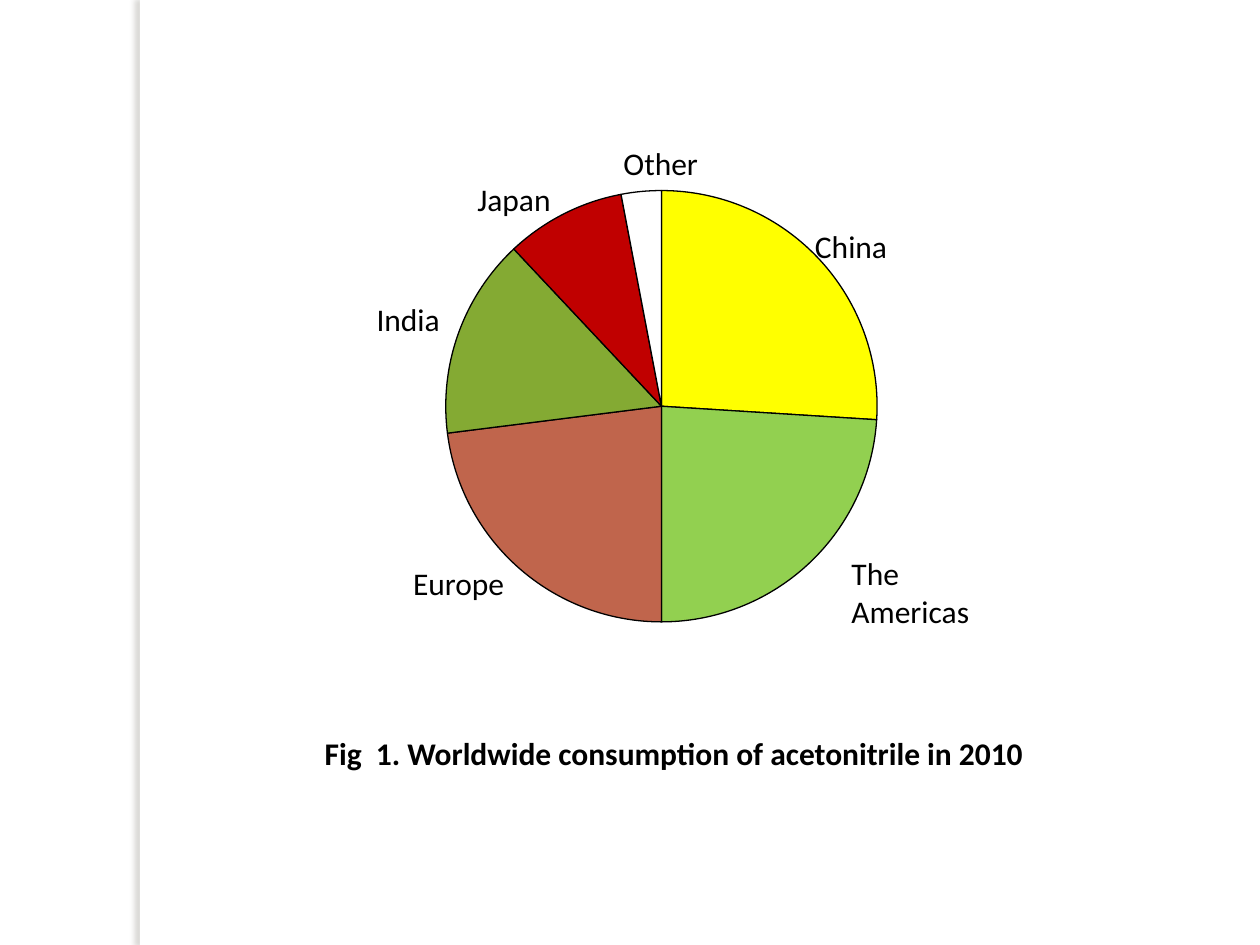
from lxml import etree
from pptx import Presentation
from pptx.chart.data import CategoryChartData
from pptx.dml.color import RGBColor
from pptx.enum.chart import XL_CHART_TYPE as ChartType
from pptx.enum.shapes import MSO_SHAPE as Shape
from pptx.enum.text import PP_ALIGN as Align
from pptx.oxml import parse_xml
from pptx.oxml.ns import nsdecls, qn
from pptx.util import Inches, Pt

FONT = "Calibri"
BLACK = "000000"
SHARES = [26, 24, 23, 15, 9, 3]
SLICE_COLORS = ["FFFF00", "92D050", "C0654C", "84AA33", "C00000", "FFFFFF"]
# Region name with its offset from the figure's top left corner
REGION_LABELS = [
    ("China", 3.48, 0.66, 0.37),
    ("The Americas", 3.77, 3.26, 0.66),
    ("Europe", 0.29, 3.34, 0.37),
    ("India", 0, 1.24, 0.37),
    ("Japan", 0.8, 0.29, 0.37),
    ("Other", 1.96, 0, 0.37),
]


def color(value):
    return RGBColor.from_string(value)


def style_font(font, size, bold=False):
    font.name = FONT
    font.size = Pt(size)
    font.bold = bold
    font.color.rgb = color(BLACK)


def add_text(slide, text, left, top, width, height, bold=False, align=Align.LEFT):
    box = slide.shapes.add_textbox(Inches(left), Inches(top), Inches(width), Inches(height))
    box.text_frame.word_wrap = True
    box.text_frame.text = text
    paragraph = box.text_frame.paragraphs[0]
    paragraph.alignment = align
    style_font(paragraph.runs[0].font, 18, bold)


def add_side_strip(slide, left, top, width, height):
    """White strip that casts a soft shadow to its left."""
    strip = slide.shapes.add_shape(
        Shape.RECTANGLE, Inches(left), Inches(top), Inches(width), Inches(height))
    strip.fill.solid()
    strip.fill.fore_color.rgb = color("FFFFFF")
    strip.line.fill.background()
    strip.shadow.inherit = False
    effects = strip._element.spPr.find(qn("a:effectLst"))
    shadow = etree.SubElement(
        effects, qn("a:outerShdw"), blurRad=str(Pt(3)), dist=str(Pt(3)),
        dir=str(180 * 60000), algn="tl", rotWithShape="0")
    shade = etree.SubElement(shadow, qn("a:srgbClr"), val="736F63")
    etree.SubElement(shade, qn("a:alpha"), val="25000")


def set_plot_area(chart, width, height):
    """Centre the inner plot area, sized as fractions of the chart."""
    plot_area = chart._chartSpace.chart.plotArea
    for layout in plot_area.findall(qn("c:layout")):
        plot_area.remove(layout)
    plot_area.insert(0, parse_xml(
        f'<c:layout {nsdecls("c")}><c:manualLayout><c:layoutTarget val="inner"/>'
        '<c:xMode val="edge"/><c:yMode val="edge"/>'
        f'<c:x val="{(1 - width) / 2:.3f}"/><c:y val="{(1 - height) / 2:.3f}"/>'
        f'<c:w val="{width}"/><c:h val="{height}"/></c:manualLayout></c:layout>'))


def add_pie(slide, left, top, width, height):
    data = CategoryChartData()
    data.categories = [str(number) for number in range(1, len(SHARES) + 1)]
    data.add_series("Series 1", SHARES)
    chart = slide.shapes.add_chart(
        ChartType.PIE, Inches(left), Inches(top), Inches(width), Inches(height), data).chart
    chart.has_title = False
    chart.has_legend = False
    style_font(chart.font, 10)
    chart.plots[0].vary_by_categories = True
    diameter = 3.42
    set_plot_area(chart, round(diameter / width, 2), round(diameter / height, 2))
    for index, fill in enumerate(SLICE_COLORS):
        slice_format = chart.series[0].points[index].format
        slice_format.fill.solid()
        slice_format.fill.fore_color.rgb = color(fill)
        slice_format.line.color.rgb = color(BLACK)
        slice_format.line.width = Pt(0.75)


def add_labelled_pie(slide, left, top):
    add_pie(slide, left + 0.22, top + 0.29, 4.28, 3.69)
    for name, x, y, height in REGION_LABELS:
        add_text(slide, name, left + x, top + y, 1.23, height)


def main():
    presentation = Presentation()
    presentation.slide_width = Inches(10)
    presentation.slide_height = Inches(7.5)
    slide = presentation.slides.add_slide(presentation.slide_layouts[6])
    add_side_strip(slide, 1.11, 0, 0.08, 7.5)
    add_labelled_pie(slide, 2.89, 1.09)
    add_text(slide, "Fig  1. Worldwide consumption of acetonitrile in 2010",
             1.56, 5.78, 7.58, 0.4, bold=True, align=Align.CENTER)
    presentation.save("out.pptx")


if __name__ == "__main__":
    main()
